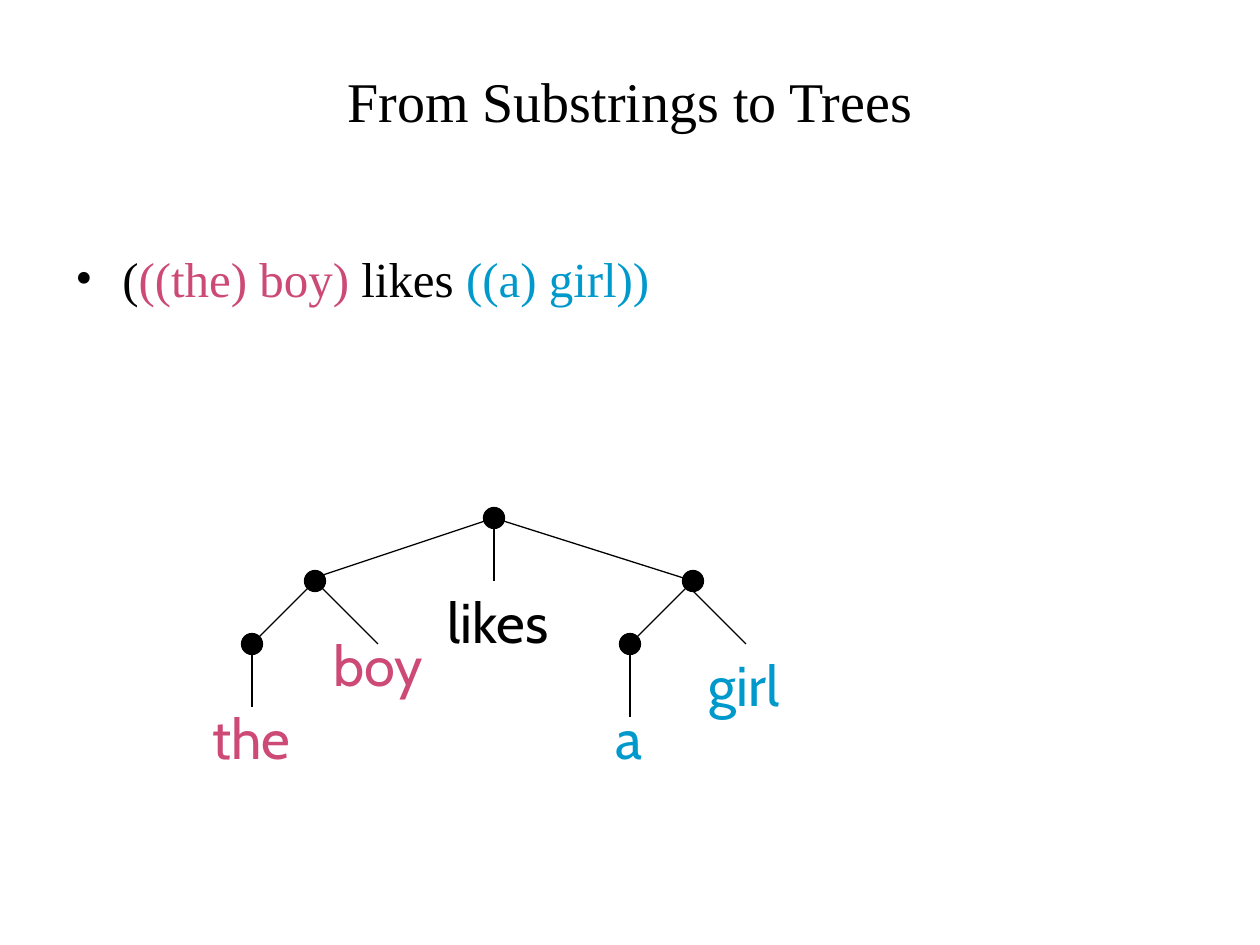
from dataclasses import dataclass

from lxml import etree
from pptx import Presentation
from pptx.dml.color import RGBColor
from pptx.enum.shapes import MSO_CONNECTOR, MSO_SHAPE
from pptx.enum.text import MSO_ANCHOR, MSO_AUTO_SIZE, PP_ALIGN
from pptx.oxml.ns import qn
from pptx.util import Emu, Pt

STRAIGHT = MSO_CONNECTOR.STRAIGHT
OVAL = MSO_SHAPE.OVAL
MIDDLE = MSO_ANCHOR.MIDDLE
CENTER = PP_ALIGN.CENTER
FIT_SHAPE = MSO_AUTO_SIZE.SHAPE_TO_FIT_TEXT

PX_PER_INCH = 126


@dataclass(frozen=True)
class Theme:
    ink: RGBColor = RGBColor(0x00, 0x00, 0x00)
    subject: RGBColor = RGBColor(0xCC, 0x4A, 0x75)
    object: RGBColor = RGBColor(0x00, 0x99, 0xCC)
    text_font: str = "Times New Roman"
    label_font: str = "Cabin"
    title_size: int = 32
    bullet_size: int = 28
    label_size: int = 32
    line_width: float = 0.75


THEME = Theme()


def px(length):
    return Emu(round(length * 914400 / PX_PER_INCH))


def add_run(paragraph, text, font, size, color):
    run = paragraph.add_run()
    run.text = text
    run.font.name = font
    run.font.size = Pt(size)
    run.font.color.rgb = color


def add_title(slide, box, text):
    title = slide.shapes.title
    title.left, title.top, title.width, title.height = map(px, box)
    title.text_frame.vertical_anchor = MIDDLE
    paragraph = title.text_frame.paragraphs[0]
    paragraph.alignment = CENTER
    add_run(paragraph, text, THEME.text_font, THEME.title_size, THEME.ink)


def add_bullet(slide, box, parts):
    frame = slide.shapes.add_textbox(*map(px, box)).text_frame
    frame.word_wrap = True
    paragraph = frame.paragraphs[0]
    for text, color in parts:
        add_run(paragraph, text, THEME.text_font, THEME.bullet_size, color)

    # Hanging indent, proportional space before and bullet character
    indent = px(47)
    properties = paragraph._p.get_or_add_pPr()
    properties.set("marL", str(indent))
    properties.set("indent", str(-indent))
    space = etree.SubElement(properties, qn("a:spcBef"))
    etree.SubElement(space, qn("a:spcPct")).set("val", "20000")
    etree.SubElement(properties, qn("a:buFont")).set("typeface", THEME.text_font)
    etree.SubElement(properties, qn("a:buChar")).set("char", "•")


def add_branch(shapes, start, end):
    branch = shapes.add_connector(STRAIGHT, *map(px, start + end))
    branch.line.color.rgb = THEME.ink
    branch.line.width = Pt(THEME.line_width)
    etree.SubElement(branch._element.spPr, qn("a:effectLst"))


def add_node(shapes, center, diameter=21):
    left, top = (value - diameter / 2 for value in center)
    node = shapes.add_shape(OVAL, px(left), px(top), px(diameter), px(diameter))
    node.shadow.inherit = False
    node.fill.solid()
    node.fill.fore_color.rgb = THEME.ink
    node.line.color.rgb = THEME.ink
    node.line.width = Pt(THEME.line_width)


def add_word(shapes, box, text, color):
    frame = shapes.add_textbox(*map(px, box)).text_frame
    frame.word_wrap = False
    frame.auto_size = FIT_SHAPE
    paragraph = frame.paragraphs[0]
    paragraph.alignment = CENTER
    add_run(paragraph, text, THEME.label_font, THEME.label_size, color)


def add_tree(slide, left, top):
    shapes = slide.shapes.add_group_shape().shapes

    def at(x, y):
        return left + x, top + y

    # Node centres, one level every 63 px
    level = 63
    root = at(295, 11)
    subject = at(116, 11 + level)
    object_ = at(494, 11 + level)
    the = at(53, 11 + 2 * level)
    a = at(431, 11 + 2 * level)

    # Branches between nodes, then down to the words
    branches = [
        (root, at(106, 74)), (root, object_), (subject, the), (object_, a),
        (subject, at(179, 137)), (the, at(53, 200)), (root, at(295, 74)),
        (at(484, 74), at(547, 137)), (a, at(431, 210)),
    ]
    for start, end in branches:
        add_branch(shapes, start, end)
    for center in (root, subject, object_, the, a):
        add_node(shapes, center)

    # Words: left, top, width
    words = [
        ("the", 0, 190, 105, THEME.subject),
        ("boy", 122, 117, 115, THEME.subject),
        ("likes", 232, 74, 134, THEME.ink),
        ("a", 403, 190, 54, THEME.object),
        ("girl", 494, 137, 102, THEME.object),
    ]
    for text, x, y, width, color in words:
        add_word(shapes, at(x, y) + (width, 79), text, color)


def main():
    presentation = Presentation()
    presentation.slide_width = px(1260)
    presentation.slide_height = px(945)
    slide = presentation.slides.add_slide(presentation.slide_layouts[5])

    add_title(slide, (63, 21, 1134, 158), "From Substrings to Trees")
    add_bullet(slide, (63, 242, 1134, 672), [
        ("(", THEME.ink),
        ("((the) boy)", THEME.subject),
        (" likes ", THEME.ink),
        ("((a) girl))", THEME.object),
    ])
    add_tree(slide, 199, 507)
    presentation.save("out.pptx")


if __name__ == "__main__":
    main()
